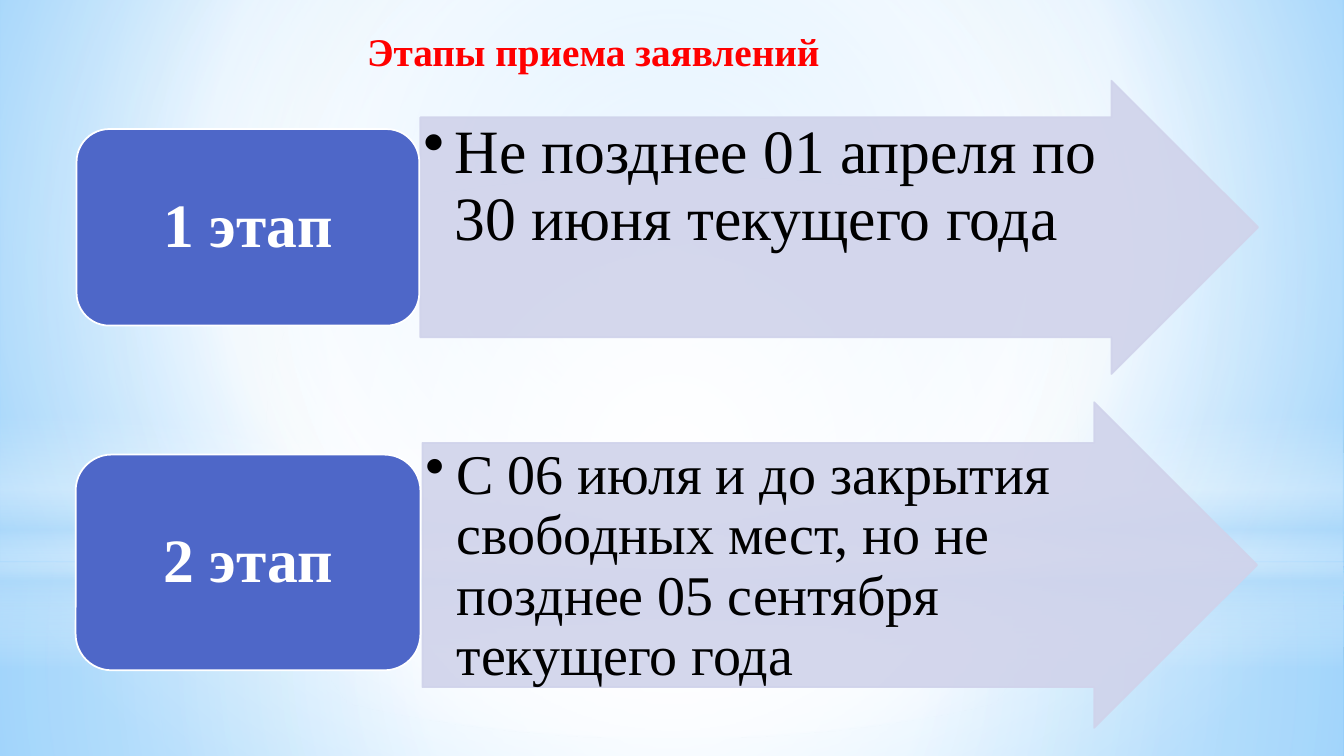
"""Build a slide with the two stages of accepting applications."""
import pptx
import pptx.util
import pptx.dml.color
import pptx.enum.shapes
import pptx.enum.text
import pptx.oxml.ns
from dataclasses import dataclass
from lxml import etree

TITLE = ("Этапы приема заявлений", (8.78, 2.93, 70.73, 7.6))

STAGES = [
    {"name": "1 этап", "box": (5.7, 17.07, 25.5, 26),
     "text": "Не позднее 01 апреля по 30 июня текущего года",
     "arrow": (31.28, 10.67, 62.33, 38.8), "size": 44},
    {"name": "2 этап", "box": (5.63, 60.13, 25.65, 28.53),
     "text": "С 06 июля и до закрытия свободных мест, но не позднее 05 сентября текущего года",
     "arrow": (31.43, 53.2, 62.1, 43.07), "size": 40},
]

KIND = pptx.enum.shapes.MSO_SHAPE
ALIGN = pptx.enum.text.PP_ALIGN
ANCHOR = pptx.enum.text.MSO_ANCHOR
MID = (50, 50, 50, 50)

SKY = [(0, "9ED5FF", 100), (60, "FFFFFF", 100), (100, "5BB9FF", 100)]
BANDS = [
    (KIND.RECTANGLE, (0, 74.4, 100, 25.6), MID,
     [(0, "FFFFFF", 91), (37, "FFFFFF", 76), (100, "B4DCFA", 79)]),
    (KIND.RECTANGLE, (0, 0, 100, 74.4), MID,
     [(0, "FFFFFF", 89), (48, "FFFFFF", 62), (100, "B4DCFA", 79)]),
    (KIND.RECTANGLE, (0, 54.93, 100, 33.33), None,
     [(0, "FFFFFF", 0), (29, "FFFFFF", 30), (45, "B4DCFA", 40),
      (55, "FFFFFF", 26), (65, "B4DCFA", 60), (100, "FFFFFF", 0)]),
    (KIND.OVAL, (0, 23.33, 100, 74.4), MID,
     [(0, "FFFFFF", 100), (56, "FFFFFF", 0)]),
]


@dataclass(frozen=True)
class Theme:
    font: str = "Times New Roman"
    title: str = "FF0000"
    box: str = "4E67C8"
    arrow: str = "D0D3EB"
    light: str = "FFFFFF"
    dark: str = "000000"
    head: int = 28
    label: int = 44
    line: float = 1.25
    clear: int = 90


THEME = Theme()
WIDE, HIGH = pptx.util.Inches(13.33), pptx.util.Inches(7.5)
qn = pptx.oxml.ns.qn


def rgb(code):
    return pptx.dml.color.RGBColor.from_string(code)


def place(part):
    return [int(share * side / 100) for share, side in zip(part, (WIDE, HIGH) * 2)]


def node(root, tag, **attrs):
    return etree.SubElement(root, qn(tag), {key: str(val) for key, val in attrs.items()})


def shade(root, stops, focus):
    old = root.find(qn("a:solidFill"))
    grad = etree.Element(qn("a:gradFill"), rotWithShape="1")
    stop_list = node(grad, "a:gsLst")
    for pos, code, alpha in stops:
        stop = node(stop_list, "a:gs", pos=pos * 1000)
        node(node(stop, "a:srgbClr", val=code), "a:alpha", val=alpha * 1000)
    if focus:
        sides = {side: share * 1000 for side, share in zip("ltrb", focus)}
        node(node(grad, "a:path", path="circle"), "a:fillToRect", **sides)
    else:
        node(grad, "a:lin", ang=90 * 60000, scaled=0)
    root.replace(old, grad)


def draw(slide, kind, part, fill=None, line=None):
    shape = slide.shapes.add_shape(kind, *place(part))
    shape.shadow.inherit = False
    shape.fill.solid()
    if fill:
        shape.fill.fore_color.rgb = rgb(fill)
    if line:
        shape.line.color.rgb = rgb(line)
        shape.line.width = pptx.util.Pt(THEME.line)
    else:
        shape.line.fill.background()
    return shape


def write(shape, text, size, color, bold, align, anchor, inset, gap=1.0):
    frame = shape.text_frame
    frame.word_wrap = True
    frame.vertical_anchor = anchor
    side, edge = (pptx.util.Inches(num) for num in inset)
    frame.margin_left = frame.margin_right = side
    frame.margin_top = frame.margin_bottom = edge
    frame.text = text
    para = frame.paragraphs[0]
    para.alignment = align
    para.line_spacing = gap
    font = para.runs[0].font
    font.name, font.size, font.bold = THEME.font, pptx.util.Pt(size), bold
    font.color.rgb = rgb(color)
    return para


def bullet(para):
    props = para._p.get_or_add_pPr()
    hang = pptx.util.Inches(0.31)
    props.set("marL", str(hang))
    props.set("indent", str(-hang))
    node(props, "a:buChar", char="•")


def stage(slide, item):
    arrow = draw(slide, KIND.RIGHT_ARROW, item["arrow"], THEME.arrow, THEME.arrow)
    arrow.adjustments[0], arrow.adjustments[1] = 0.75, 0.5
    for color in arrow.element.spPr.iter(qn("a:srgbClr")):
        node(color, "a:alpha", val=THEME.clear * 1000)
    bullet(write(arrow, item["text"], item["size"], THEME.dark, False,
                 ALIGN.LEFT, ANCHOR.TOP, (0.03, 0.03), 0.9))
    box = draw(slide, KIND.ROUNDED_RECTANGLE, item["box"], THEME.box, THEME.light)
    write(box, item["name"], THEME.label, THEME.light, True,
          ALIGN.CENTER, ANCHOR.MIDDLE, (0.18, 0.09), 0.9)


def main():
    deck = pptx.Presentation()
    deck.slide_width, deck.slide_height = WIDE, HIGH
    slide = deck.slides.add_slide(deck.slide_layouts[5])
    slide.background.fill.solid()
    shade(slide.element.find(".//" + qn("p:bgPr")), SKY, (20, 10, 20, 60))
    for kind, part, focus, stops in BANDS:
        shade(draw(slide, kind, part).element.spPr, stops, focus)
    for item in STAGES:
        stage(slide, item)
    text, part = TITLE
    title = slide.shapes.title
    title.left, title.top, title.width, title.height = place(part)
    write(title, text, THEME.head, THEME.title, True,
          ALIGN.CENTER, ANCHOR.TOP, (0.1, 0.05))
    title.element.getparent().append(title.element)
    deck.save("out.pptx")


if __name__ == "__main__":
    main()
